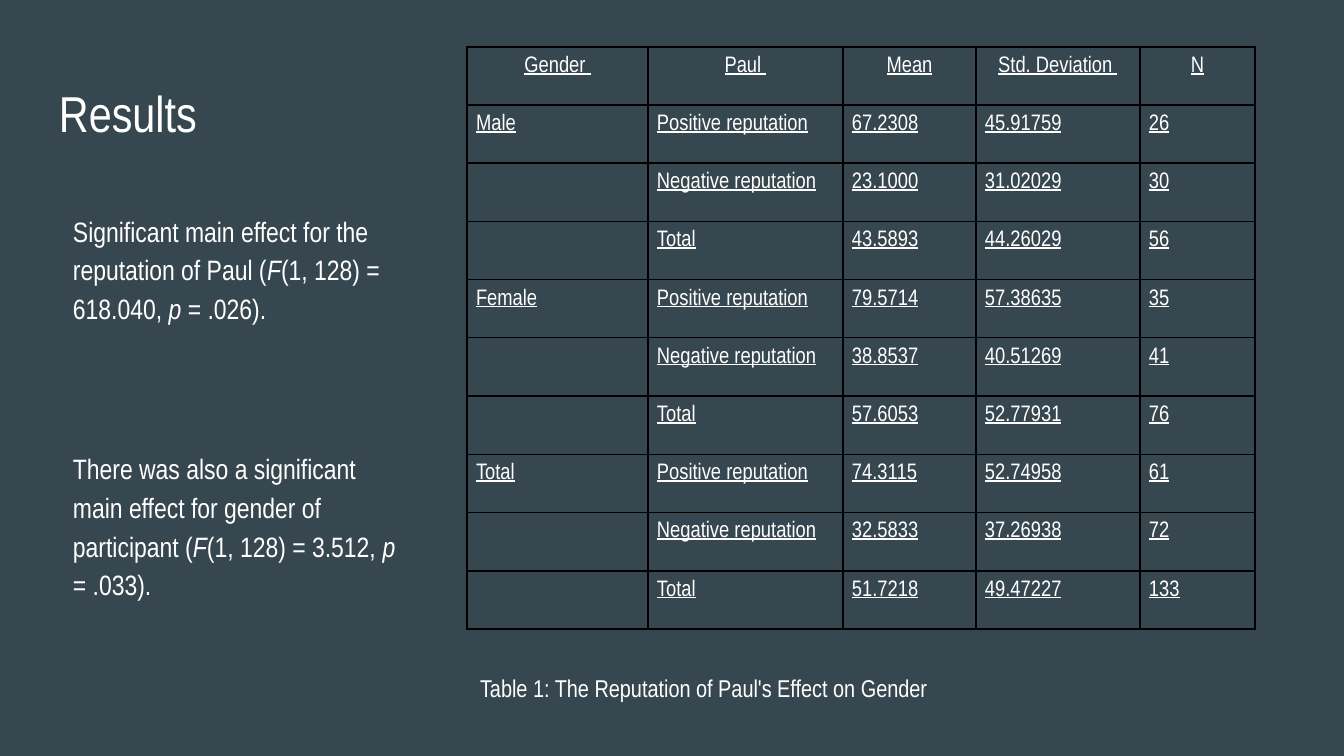
from lxml import etree
from pptx import Presentation
from pptx.dml.color import RGBColor
from pptx.enum.text import MSO_ANCHOR, PP_ALIGN
from pptx.oxml.ns import qn
from pptx.util import Emu, Pt

SCALE = 914400 / 134.4
SLATE = RGBColor(0x37, 0x47, 0x4F)
WHITE = RGBColor(0xFF, 0xFF, 0xFF)
BLACK = RGBColor(0x00, 0x00, 0x00)
FONT = "Arial Narrow"
TOP = MSO_ANCHOR.TOP
CENTER, LEFT = PP_ALIGN.CENTER, PP_ALIGN.LEFT

FINDINGS = [
    [("Significant main effect for the reputation of Paul (", False), ("F", True),
     ("(1, 128) = 618.040, ", False), ("p", True), (" = .026).", False)],
    [("There was also a significant main effect for gender of participant (", False),
     ("F", True), ("(1, 128) = 3.512, ", False), ("p", True), (" = .033).", False)],
]
COLUMN_WIDTHS = [181, 195, 133, 164, 115]
ROW_HEIGHT = 58
HEADINGS = ["Gender ", "Paul ", "Mean", "Std. Deviation ", "N"]
REPUTATIONS = ["Positive reputation", "Negative reputation", "Total"]
STATISTICS = {
    "Male": [("67.2308", "45.91759", "26"), ("23.1000", "31.02029", "30"),
             ("43.5893", "44.26029", "56")],
    "Female": [("79.5714", "57.38635", "35"), ("38.8537", "40.51269", "41"),
               ("57.6053", "52.77931", "76")],
    "Total": [("74.3115", "52.74958", "61"), ("32.5833", "37.26938", "72"),
              ("51.7218", "49.47227", "133")],
}


def px(length):
    """Turn pixels into EMU."""
    return Emu(round(length * SCALE))


def add_span(para, text, size, italic=False, underline=False):
    """Add one formatted run to a paragraph."""
    span = para.add_run()
    span.text = text
    font = span.font
    font.name, font.size = FONT, Pt(size)
    font.italic, font.underline = italic, underline
    font.color.rgb = WHITE


def add_text(page, box, paragraphs, size, inset_top, spacing=1.0, gap=0):
    """Place a wrapped text box with paragraphs separated by a gap."""
    frame = page.shapes.add_textbox(*map(px, box)).text_frame
    frame.word_wrap = True
    frame.vertical_anchor = TOP
    frame.margin_left = frame.margin_right = frame.margin_bottom = px(13)
    frame.margin_top = px(inset_top)
    for index, spans in enumerate(paragraphs):
        para = frame.add_paragraph() if index else frame.paragraphs[0]
        para.line_spacing = spacing
        para.space_before = px(gap if index else 0)
        for text, italic in spans:
            add_span(para, text, size, italic)


def add_title(page, box):
    """Place the slide title."""
    add_text(page, box, [[("Results", False)]], 27, 16)


def add_findings(page, box):
    """Place the two findings beside the table."""
    add_text(page, box, FINDINGS, 15, 67, 1.15, 122)


def add_caption(page, box):
    """Place the caption under the table."""
    caption = "Table 1: The Reputation of Paul's Effect on Gender"
    add_text(page, box, [[(caption, False)]], 13, 35, 1.15)


def set_borders(cell):
    """Draw thin solid lines on all four sides of a cell."""
    properties = cell._tc.get_or_add_tcPr()
    for index, side in enumerate(("a:lnL", "a:lnR", "a:lnT", "a:lnB")):
        line = etree.Element(qn(side), w=str(Pt(1)))
        fill = etree.SubElement(line, qn("a:solidFill"))
        etree.SubElement(fill, qn("a:srgbClr"), val=str(BLACK))
        properties.insert(index, line)


def statistics_rows():
    """List the table rows, naming each gender only once."""
    rows = [HEADINGS]
    for gender, figures in STATISTICS.items():
        for index, (reputation, values) in enumerate(zip(REPUTATIONS, figures)):
            rows.append([gender if index == 0 else "", reputation, *values])
    return rows


def add_statistics(page, left, top):
    """Place the table of descriptive statistics."""
    rows = statistics_rows()
    size = (sum(COLUMN_WIDTHS), ROW_HEIGHT * len(rows))
    table = page.shapes.add_table(
        len(rows), len(COLUMN_WIDTHS), *map(px, (left, top, *size))).table
    table.first_row = table.horz_banding = False
    for column, width in zip(table.columns, COLUMN_WIDTHS):
        column.width = px(width)
    for row_index, row in enumerate(rows):
        table.rows[row_index].height = px(ROW_HEIGHT)
        for column_index, text in enumerate(row):
            cell = table.cell(row_index, column_index)
            cell.fill.background()
            cell.margin_left = cell.margin_right = px(9)
            cell.margin_top = cell.margin_bottom = px(9)
            set_borders(cell)
            if text:
                para = cell.text_frame.paragraphs[0]
                para.alignment = LEFT if row_index else CENTER
                add_span(para, text, 12, underline=True)


def main():
    """Build and save the results slide."""
    deck = Presentation()
    deck.slide_width, deck.slide_height = px(1344), px(756)
    page = deck.slides.add_slide(deck.slide_layouts[6])
    page.background.fill.solid()
    page.background.fill.fore_color.rgb = SLATE
    add_title(page, (46, 66, 1252, 85))
    add_statistics(page, 467, 47)
    add_caption(page, (467, 641, 702, 73))
    add_findings(page, (60, 142, 360, 600))
    deck.save("out.pptx")


if __name__ == "__main__":
    main()
